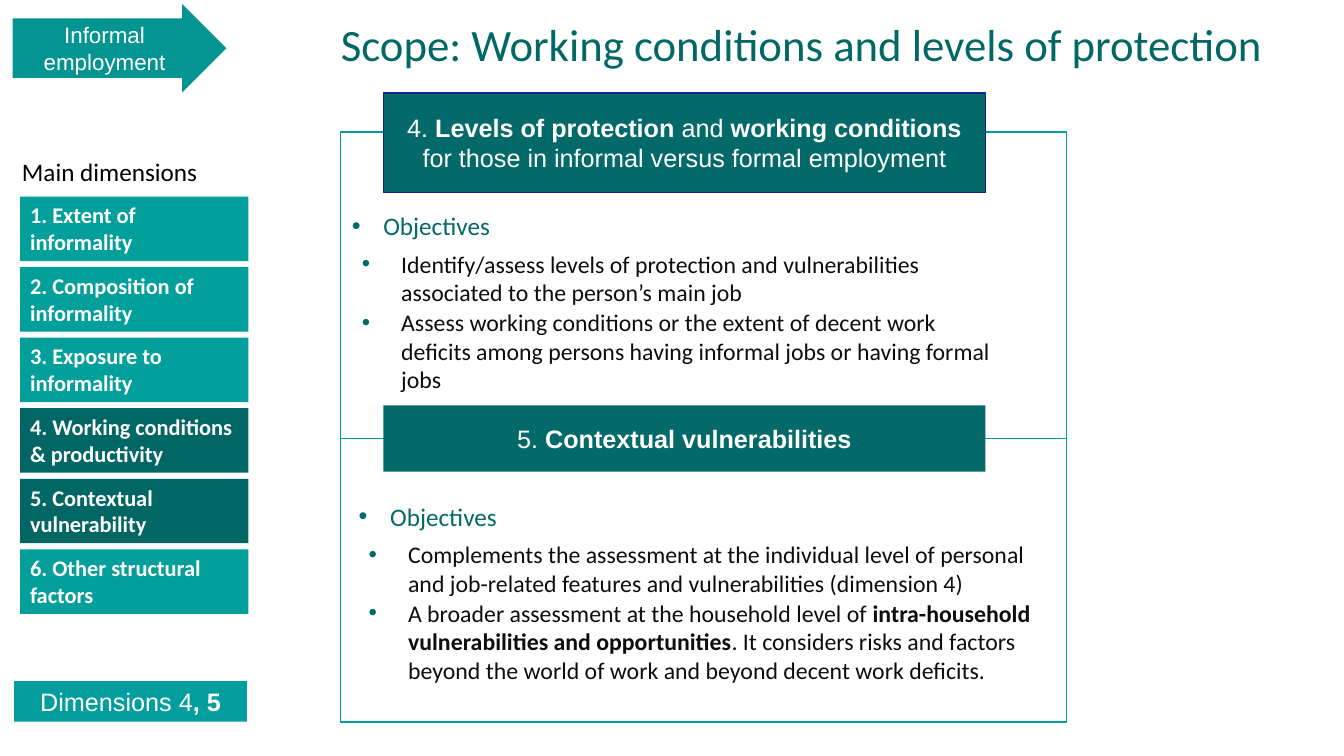
from lxml import etree
from pptx import Presentation
from pptx.dml.color import RGBColor
from pptx.enum.shapes import MSO_SHAPE
from pptx.enum.text import MSO_ANCHOR, MSO_AUTO_SIZE, PP_ALIGN
from pptx.oxml.ns import qn
from pptx.util import Pt

RECTANGLE, ARROW = MSO_SHAPE.RECTANGLE, MSO_SHAPE.RIGHT_ARROW
TOP, MIDDLE = MSO_ANCHOR.TOP, MSO_ANCHOR.MIDDLE
LEFT, CENTER = PP_ALIGN.LEFT, PP_ALIGN.CENTER
NO_AUTOFIT = MSO_AUTO_SIZE.NONE

TEAL, DARK_TEAL, DEEP_TEAL = "039F9B", "026664", "036969"
WHITE, BLACK, INK = "FFFFFF", "000000", "0D0D0D"

DIMENSIONS = [
    ("1. Extent of informality", TEAL),
    ("2. Composition of informality", TEAL),
    ("3. Exposure to informality", TEAL),
    ("4. Working conditions & productivity", DARK_TEAL),
    ("5. Contextual vulnerability", DARK_TEAL),
    ("6. Other structural factors", TEAL),
]
PROTECTION_HEADING = [
    ("4. ", False), ("Levels of protection ", True), ("and ", False),
    ("working conditions", True),
    (" for those in informal versus formal employment", False),
]
PROTECTION_OBJECTIVES = [
    [("Identify/assess levels of protection and vulnerabilities "
      "associated to the person’s main job", False)],
    [("Assess working conditions or the extent of decent work deficits "
      "among persons having informal jobs or having formal jobs", False)],
]
CONTEXT_HEADING = [("5. ", False), ("Contextual vulnerabilities", True)]
CONTEXT_OBJECTIVES = [
    [("Complements the assessment at the individual level of personal "
      "and job-related features and vulnerabilities (dimension 4)", False)],
    [("A broader assessment at the household level of ", False),
     ("intra-household vulnerabilities and opportunities", True),
     (". It considers risks and factors beyond the world of work "
      "and beyond decent work deficits.", False)],
]


def color(value):
    """Return the colour for a hex string."""
    return RGBColor.from_string(value)


def place(shape, box):
    """Move a shape to a box of left, top, width and height in points."""
    shape.left, shape.top, shape.width, shape.height = map(Pt, box)


def prepare_frame(shape, anchor=TOP):
    """Return the shape's text frame, wrapped, unscaled and anchored."""
    frame = shape.text_frame
    frame.word_wrap = True
    frame.auto_size = NO_AUTOFIT
    frame.vertical_anchor = anchor
    return frame


def write(paragraph, runs, size=18, font="Arial", ink=WHITE, align=LEFT,
          space_after=0, line_spacing=1.0):
    """Write (text, bold) runs into a paragraph with the given format."""
    paragraph.alignment = align
    paragraph.space_before = Pt(0)
    paragraph.space_after = Pt(space_after)
    paragraph.line_spacing = line_spacing
    for text, bold in runs:
        run = paragraph.add_run()
        run.text = text
        run.font.size = Pt(size)
        run.font.name = font
        run.font.bold = bold
        run.font.color.rgb = color(ink)


def add_bullet(paragraph, margin, hanging):
    """Give a paragraph a teal bullet with a hanging indent in points."""
    properties = paragraph._p.get_or_add_pPr()
    properties.set("marL", str(Pt(margin)))
    properties.set("indent", str(-Pt(hanging)))
    bullet_color = etree.SubElement(properties, qn("a:buClr"))
    etree.SubElement(bullet_color, qn("a:srgbClr"), val=DEEP_TEAL)
    etree.SubElement(properties, qn("a:buFont"), typeface="Arial")
    etree.SubElement(properties, qn("a:buChar"), char="•")


def add_block(slide, box, fill=None, line=None, kind=RECTANGLE):
    """Add a flat preset shape with an optional fill and outline."""
    shape = slide.shapes.add_shape(kind, *map(Pt, box))
    shape.shadow.inherit = False
    if fill:
        shape.fill.solid()
        shape.fill.fore_color.rgb = color(fill)
    else:
        shape.fill.background()
    if line:
        shape.line.color.rgb = color(line)
        shape.line.width = Pt(1)
    else:
        shape.line.fill.background()
    return shape


def add_label(slide, box, runs, fill, line=None, kind=RECTANGLE, size=18):
    """Add a filled shape with centred text."""
    shape = add_block(slide, box, fill, line, kind)
    frame = prepare_frame(shape, MIDDLE)
    write(frame.paragraphs[0], runs, size=size, align=CENTER)
    return shape


def fill_title(title, box):
    """Place and write the slide title."""
    place(title, box)
    frame = prepare_frame(title)
    frame.margin_left = frame.margin_right = 0
    frame.margin_top = frame.margin_bottom = 0
    write(frame.paragraphs[0],
          [("Scope: Working conditions and levels of protection", False)],
          size=32, font="Calibri", ink="026866", line_spacing=0.9)


def fill_objectives(body, box, objectives):
    """Write the objectives list in a body placeholder, in front of the panels."""
    place(body, box)
    body.element.getparent().append(body.element)
    frame = prepare_frame(body)
    heading = frame.paragraphs[0]
    write(heading, [("Objectives", False)], font="Calibri", ink=DEEP_TEAL,
          space_after=6)
    add_bullet(heading, 22.5, 22.5)
    for runs in objectives:
        paragraph = frame.add_paragraph()
        paragraph.level = 1
        write(paragraph, runs, size=17, font="Calibri", ink=INK, space_after=1)
        add_bullet(paragraph, 35.3, 28.1)


def add_sidebar(slide, box):
    """Add the arrow, the list of dimensions and the current dimensions."""
    left, top, width, height = box
    arrow = add_label(slide, (left, top, 154, 66.2),
                      [("Informal employment", False)], "049592", WHITE,
                      kind=ARROW, size=16)
    arrow.adjustments[0] = 0.66
    arrow.adjustments[1] = 0.5
    caption = slide.shapes.add_textbox(*map(Pt, (left, top + 106.5, width, 28.8)))
    write(prepare_frame(caption).paragraphs[0], [("Main dimensions", False)],
          font="Calibri", ink=BLACK)
    for index, (text, fill) in enumerate(DIMENSIONS):
        item = add_block(slide, (left + 5.8, top + 139 + index * 50.4,
                                 width - 5.8, 46.1), fill)
        write(prepare_frame(item).paragraphs[0], [(text, True)], size=16,
              font="Calibri")
    add_label(slide, (left + 1.5, top + height - 29, width - 2.5, 29),
              [("Dimensions 4", False), (", 5", True)], "049D9D")


def add_scope(slide, box, bodies):
    """Add the framed panels with their headings and objectives."""
    left, top, width, height = box
    middle = top + 219
    add_block(slide, (left, middle, width, top + height - middle),
              WHITE, "049D9D")
    add_block(slide, box, line="049D9D")
    add_label(slide, (left + 30.5, middle - 23.8, 430, 47.5),
              CONTEXT_HEADING, DEEP_TEAL)
    add_label(slide, (left + 30.5, top - 28, 430, 71.3),
              PROTECTION_HEADING, DEEP_TEAL, "16218D")
    fill_objectives(bodies[0], (left + 0.7, top + 52.6, 485.3, 118.8),
                    PROTECTION_OBJECTIVES)
    fill_objectives(bodies[1], (left + 5.6, middle + 41, width - 5.8, 139),
                    CONTEXT_OBJECTIVES)


def main():
    """Build and save the presentation."""
    presentation = Presentation()
    presentation.slide_width, presentation.slide_height = Pt(960), Pt(540)
    slide = presentation.slides.add_slide(presentation.slide_layouts[3])
    title, *bodies = list(slide.placeholders)
    fill_title(title, (243.4, 16.6, 707.8, 41))
    add_scope(slide, (243.4, 94.3, 518.4, 421.5), bodies)
    add_sidebar(slide, (8.6, 1.4, 168.8, 514.1))
    presentation.save("out.pptx")


if __name__ == "__main__":
    main()
